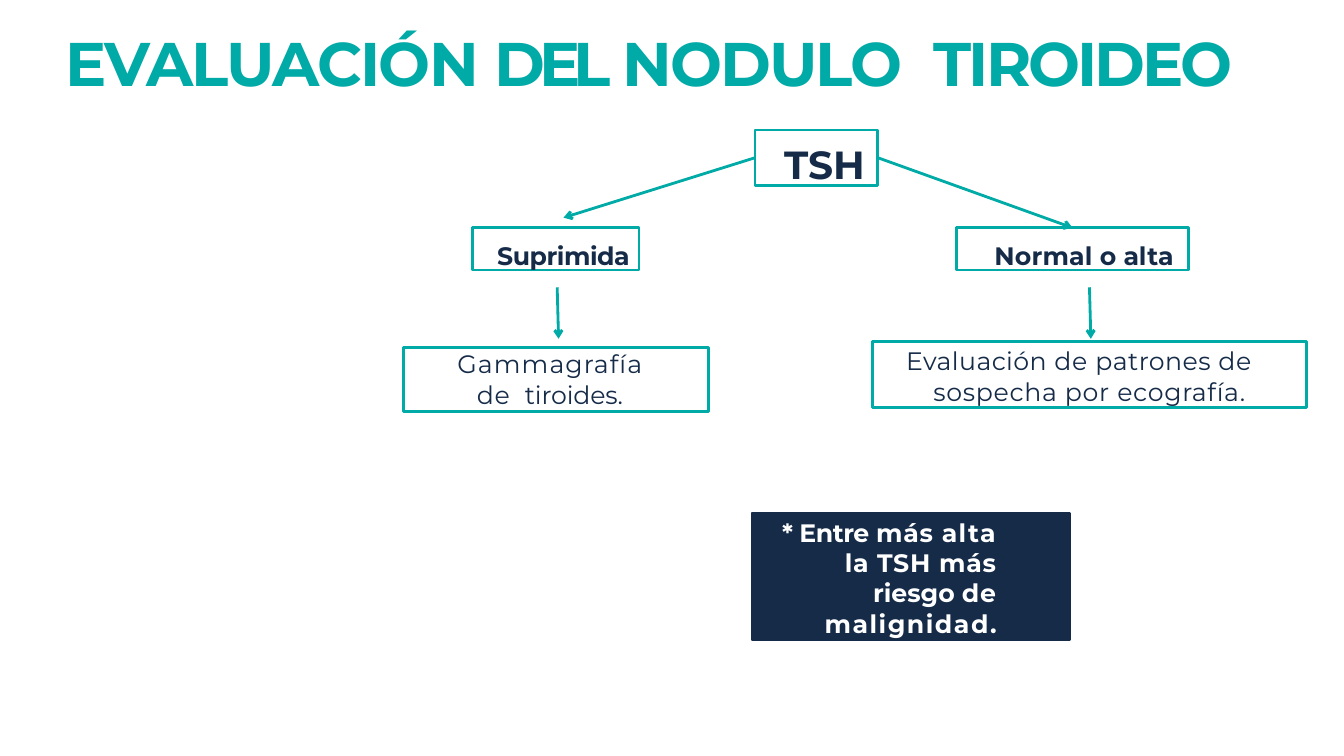
import pptx
import pptx.util
import pptx.dml.color
import pptx.enum.shapes
import pptx.enum.text
import pptx.oxml
import pptx.oxml.ns

Pt = pptx.util.Pt
RGBColor = pptx.dml.color.RGBColor
ALIGN = pptx.enum.text.PP_ALIGN
ANCHOR = pptx.enum.text.MSO_ANCHOR

TEAL = RGBColor(0x00, 0xAA, 0xA7)
NAVY = RGBColor(0x15, 0x2B, 0x48)
WHITE = RGBColor(0xFF, 0xFF, 0xFF)
FONT = "Montserrat"
TOP, LEFT, RIGHT = 0, 1, 3  # connection sites of a rectangle

# Content: each paragraph is a list of (text, letter spacing in points)
TITLE = [[("EVALUACIÓN ", -1.3), ("DEL ", -4.6), ("NODULO", -1.4),
          (" ", 10), ("TIROIDEO", -2.2)]]

# name: position (left, top, width, height), insets (left, top, right), paragraphs, style
BOXES = {
    "tsh": ((539.3, 92.9, 87.8, 39.6), (11.5, 0, 0), [[("TSH", 0)]],
            dict(size=28, bold=True, anchor=ANCHOR.MIDDLE, line_spacing=Pt(42.8))),
    "suppressed": ((337.7, 162.7, 118.8, 30.2), (10.8, 8.6, 0),
                   [[("Suprimida", -0.3)]], dict(bold=True)),
    "normal": ((683.3, 162.7, 165.6, 30.2), (16.6, 8.6, 0),
               [[("Normal ", 0.1), ("o ", 0), ("alta", -0.1)]], dict(bold=True)),
    "scan": ((288, 248.4, 218.2, 45.4), (24.5, 0.7, 33.1),
             [[("Gammagrafía", 0.8)],
              [("de", 0.5), (" ", 5.5), ("tiroides.", -0.1)]], dict()),
    "ultrasound": ((623.5, 244.1, 309.6, 46.8), (22.3, 2.9, 37.4),
                   [[("Evaluación ", 0.3), ("de ", 0.5), ("patrones ", 0.3),
                     ("de sospecha por ecografía.", 0.5)]], dict(hanging=15)),
    "risk": ((537.1, 366.5, 226.8, 90.7), (14.4, 2.9, 51.8),
             [[("* Entre ", -0.3), ("más ", 0.6), ("alta ", 0.8), ("la TSH ", 0.5),
               ("más ", 0.6), ("riesgo ", 0), ("de ", 0.6), ("malignidad.", 1.1)]],
             dict(bold=True, color=WHITE, fill=NAVY, line=NAVY, align=ALIGN.RIGHT)),
}

# Start point, end point, joined start (box, side), joined end (box, side)
ARROWS = [
    ((539.3, 112.7), (402.5, 155.5), ("tsh", LEFT), None),
    ((627.1, 112.7), (766.1, 162.7), ("tsh", RIGHT), ("normal", TOP)),
    ((398, 205.2), (399, 242), None, None),
    ((778.2, 205.2), (779.2, 242), None, None),
]


def write_text(shape, paragraphs, insets, size=18, bold=False, color=NAVY,
               align=ALIGN.CENTER, anchor=ANCHOR.TOP, line_spacing=None, hanging=0):
    frame = shape.text_frame
    frame.word_wrap = True
    frame.vertical_anchor = anchor
    frame.margin_left, frame.margin_top, frame.margin_right = map(Pt, insets)
    frame.margin_bottom = 0
    frame.text = "\n".join("".join(text for text, _ in runs) for runs in paragraphs)
    for paragraph, runs in zip(frame.paragraphs, paragraphs):
        paragraph.alignment = align
        if line_spacing:
            paragraph.line_spacing = line_spacing
        if hanging:
            properties = paragraph._p.get_or_add_pPr()
            properties.set("marL", str(Pt(hanging)))
            properties.set("indent", str(-Pt(hanging)))
        paragraph.runs[0].text = runs[0][0]
        for text, _ in runs[1:]:
            paragraph.add_run().text = text
        for run, (_, spacing) in zip(paragraph.runs, runs):
            run.font.name = FONT
            run.font.size = Pt(size)
            run.font.bold = bold
            run.font.color.rgb = color
            run._r.get_or_add_rPr().set("spc", str(round(spacing * 100)))


def add_box(slide, position, insets, paragraphs, fill=None, line=TEAL, **style):
    shape = slide.shapes.add_shape(
        pptx.enum.shapes.MSO_SHAPE.RECTANGLE, *map(Pt, position))
    shape.shadow.inherit = False
    if fill is None:
        shape.fill.background()
    else:
        shape.fill.solid()
        shape.fill.fore_color.rgb = fill
    shape.line.color.rgb = line
    shape.line.width = Pt(2)
    write_text(shape, paragraphs, insets, **style)
    return shape


def add_arrow(slide, boxes, start, end, start_join, end_join):
    arrow = slide.shapes.add_connector(
        pptx.enum.shapes.MSO_CONNECTOR.STRAIGHT, *map(Pt, start + end))
    if start_join:
        arrow.begin_connect(boxes[start_join[0]], start_join[1])
    if end_join:
        arrow.end_connect(boxes[end_join[0]], end_join[1])
    arrow.line.color.rgb = TEAL
    arrow.line.width = Pt(2)
    head = pptx.oxml.parse_xml(
        '<a:tailEnd %s type="arrow"/>' % pptx.oxml.ns.nsdecls("a"))
    arrow.line._get_or_add_ln().append(head)
    arrow._element.spPr.append(pptx.oxml.parse_xml(
        "<a:effectLst %s/>" % pptx.oxml.ns.nsdecls("a")))


def main():
    presentation = pptx.Presentation()
    presentation.slide_width, presentation.slide_height = Pt(960), Pt(540)
    slide = presentation.slides.add_slide(presentation.slide_layouts[6])

    # Title
    title = slide.shapes.add_textbox(Pt(46.8), Pt(18), Pt(885.6), Pt(51.8))
    write_text(title, TITLE, (0, 0, 0), size=44, bold=True, color=TEAL,
               align=ALIGN.LEFT, anchor=ANCHOR.MIDDLE, line_spacing=1.02)

    # Decision tree
    boxes = {name: add_box(slide, position, insets, paragraphs, **style)
             for name, (position, insets, paragraphs, style) in BOXES.items()}
    for arrow in ARROWS:
        add_arrow(slide, boxes, *arrow)

    presentation.save("out.pptx")


if __name__ == "__main__":
    main()
